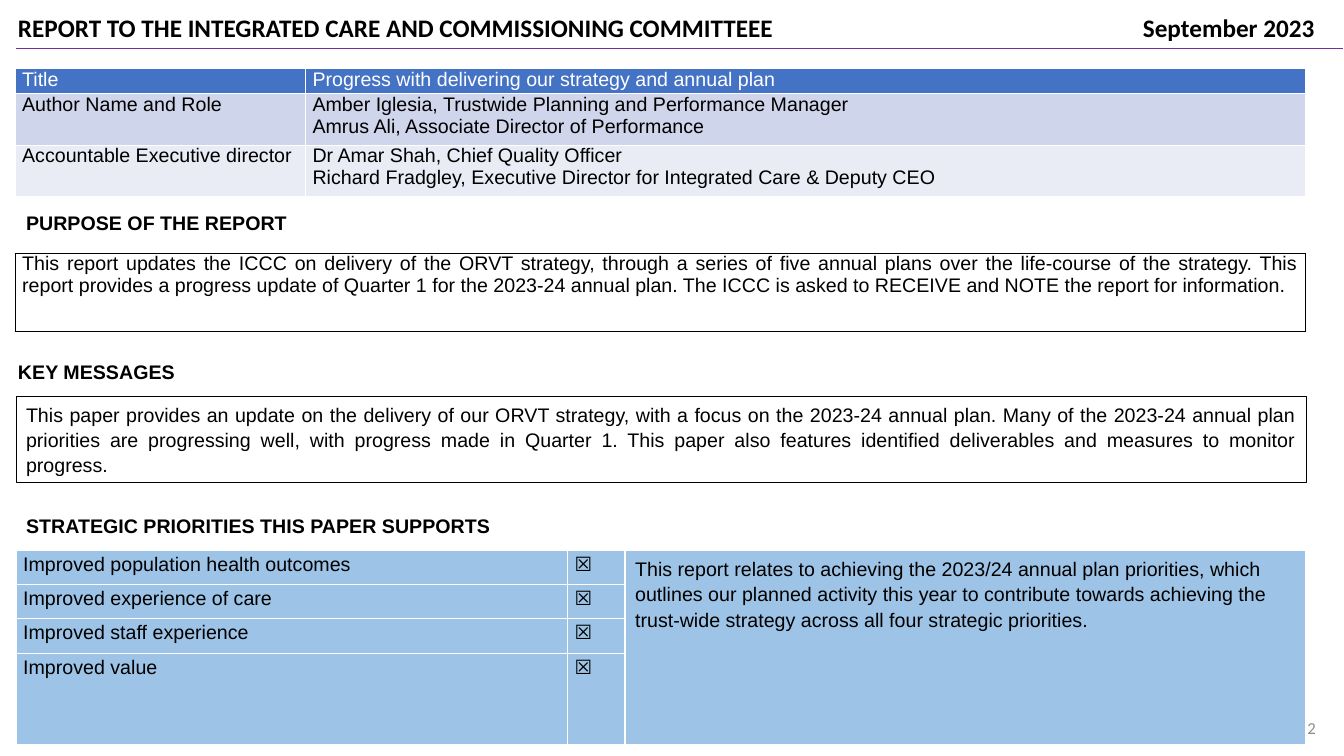
from lxml import etree
from pptx import Presentation
from pptx import util as u
from pptx.dml.color import RGBColor
from pptx.enum import shapes, text
from pptx.oxml.ns import qn

COLORS = {
    "black": "000000", "white": "FFFFFF", "purple": "7030A0", "grey": "8C8C8C",
    "header": "4472C4", "band_dark": "CFD5EA", "band_light": "E9EBF5",
    "priority": "9DC3E6",
}
ALIGN = text.PP_ALIGN
LEFT, WIDTH = 0.15, 12.8


def rgb(name):
    return RGBColor.from_string(COLORS[name])


def write(tf, content, size=14, font="Arial", color="black", bold=False,
          align=ALIGN.LEFT, spacing=None, after=None):
    tf.word_wrap = True
    for i, line in enumerate(content.split("\n")):
        p = tf.paragraphs[0] if i == 0 else tf.add_paragraph()
        p.alignment = align
        if spacing:
            p.line_spacing = spacing
        if after:
            p.space_after = u.Pt(after)
        for j, part in enumerate(line.split("\v")):
            if j:
                p.add_line_break()
            r = p.add_run()
            r.text = part
            r.font.size, r.font.name, r.font.bold = u.Pt(size), font, bold
            r.font.color.rgb = rgb(color)


class ReportSlide:
    def __init__(self, prs):
        self.s = prs.slides.add_slide(prs.slide_layouts[6])

    def text(self, box, content, anchor=text.MSO_ANCHOR.TOP, **fmt):
        sp = self.s.shapes.add_textbox(*map(u.Inches, box))
        sp.text_frame.vertical_anchor = anchor
        write(sp.text_frame, content, **fmt)
        return sp

    def heading(self, left, top, width, content):
        self.text((left, top, width, 0.34), content, bold=True)

    def title(self, content, tab):
        sp = self.text((0.08, 0.07, 13.16, 0.71), content,
                       size=18, font="Calibri", bold=True)
        pPr = sp.text_frame.paragraphs[0]._p.get_or_add_pPr()
        tabs = etree.SubElement(pPr, qn("a:tabLst"))
        etree.SubElement(tabs, qn("a:tab"), pos=str(u.Inches(tab)), algn="r")

    def rule(self, x1, x2, y):
        ln = self.s.shapes.add_connector(
            shapes.MSO_CONNECTOR.STRAIGHT,
            u.Inches(x1), u.Inches(y), u.Inches(x2), u.Inches(y))
        ln.line.color.rgb = rgb("purple")
        ln.line.width = u.Pt(0.5)
        etree.SubElement(ln._element.spPr, qn("a:effectLst"))

    def panel(self, box, content, **fmt):
        sp = self.s.shapes.add_shape(shapes.MSO_SHAPE.RECTANGLE, *map(u.Inches, box))
        sp.shadow.inherit = False
        sp.fill.background()
        sp.line.color.rgb = rgb("black")
        sp.line.width = u.Pt(0.75)
        sp.text_frame.vertical_anchor = text.MSO_ANCHOR.TOP
        write(sp.text_frame, content, **fmt)

    def table(self, left, top, cols, heights, rows, fills, border="white", weight=1,
              header_color="black", **fmt):
        tbl = self.s.shapes.add_table(
            len(rows), len(cols), u.Inches(left), u.Inches(top),
            u.Inches(sum(cols)), u.Inches(sum(heights))).table
        tbl.first_row = tbl.horz_banding = False
        for col, width in zip(tbl.columns, cols):
            col.width = u.Inches(width)
        for i, (row, height, fill) in enumerate(zip(rows, heights, fills)):
            tbl.rows[i].height = u.Inches(height)
            for j in range(len(cols)):
                cell = tbl.cell(i, j)
                self.style_cell(cell, fill, border, weight)
                if j < len(row):
                    color = "black" if i else header_color
                    write(cell.text_frame, row[j], color=color, **fmt)
        return tbl

    def style_cell(self, cell, fill, border, weight):
        cell.margin_left = cell.margin_right = u.Inches(0.07)
        cell.margin_top = cell.margin_bottom = 0
        tcPr = cell._tc.get_or_add_tcPr()
        for side in ("lnL", "lnR", "lnT", "lnB"):
            ln = etree.SubElement(tcPr, qn(f"a:{side}"), w=str(u.Pt(weight)))
            solid = etree.SubElement(ln, qn("a:solidFill"))
            etree.SubElement(solid, qn("a:srgbClr"), val=COLORS[border])
        cell.fill.solid()
        cell.fill.fore_color.rgb = rgb(fill)


def main():
    prs = Presentation()
    prs.slide_width, prs.slide_height = u.Inches(13.33), u.Inches(7.5)
    report = ReportSlide(prs)

    report.title("REPORT TO THE INTEGRATED CARE AND COMMISSIONING COMMITTEEE\t"
                 "September 2023", tab=12.86)
    report.rule(0.16, 13.32, 0.48)

    report.table(
        LEFT, 0.68, [2.88, 9.92], [0.25, 0.51, 0.51],
        [("Title", "Progress with delivering our strategy and annual plan"),
         ("Author Name and Role",
          "Amber Iglesia, Trustwide Planning and Performance Manager\v"
          "Amrus Ali, Associate Director of Performance"),
         ("Accountable Executive director",
          "Dr Amar Shah, Chief Quality Officer\n"
          "Richard Fradgley, Executive Director for Integrated Care & Deputy CEO")],
        ["header", "band_dark", "band_light"], header_color="white")

    report.heading(0.16, 2.04, 3.89, "PURPOSE OF THE REPORT")
    report.table(
        LEFT, 2.51, [WIDTH], [0.78],
        [("This report updates the ICCC on delivery of the ORVT strategy, through a "
          "series of five annual plans over the life-course of the strategy. This "
          "report provides a progress update of Quarter 1 for the 2023-24 annual plan. "
          "The ICCC is asked to RECEIVE and NOTE the report for information.",)],
        ["white"], border="black", weight=0.75, align=ALIGN.JUSTIFY)

    report.heading(0.08, 3.52, 3.89, "KEY MESSAGES")
    report.panel(
        (0.16, 3.93, WIDTH, 0.86),
        "This paper provides an update on the delivery of our ORVT strategy, with a "
        "focus on the 2023-24 annual plan. Many of the 2023-24 annual plan priorities "
        "are progressing well, with progress made in Quarter 1. This paper also "
        "features identified deliverables and measures to monitor progress.",
        align=ALIGN.JUSTIFY, spacing=1.07, after=8)

    report.text((10.15, 7.02, 3, 0.4), "2", anchor=text.MSO_ANCHOR.MIDDLE,
                size=12, font="Calibri", color="grey", align=ALIGN.RIGHT)

    report.heading(0.16, 5.05, 5.09, "STRATEGIC PRIORITIES THIS PAPER SUPPORTS")
    priorities = ["Improved population health outcomes", "Improved experience of care",
                  "Improved staff experience", "Improved value"]
    rows = [(name, "☒") for name in priorities]
    rows[0] += ("This report relates to achieving the 2023/24 annual plan priorities, "
                "which outlines our planned activity this year to contribute towards "
                "achieving the trust-wide strategy across all four strategic "
                "priorities.",)
    count = len(rows)
    tbl = report.table(0.16, 5.46, [5.47, 0.57, 6.75], [0.34] * count, rows,
                       ["priority"] * count, spacing=1.15, after=10)
    summary = tbl.cell(0, 2)
    summary.merge(tbl.cell(count - 1, 2))
    summary.margin_left = summary.margin_right = u.Inches(0.1)
    summary.margin_top = summary.margin_bottom = u.Inches(0.05)

    prs.save("out.pptx")


if __name__ == "__main__":
    main()
